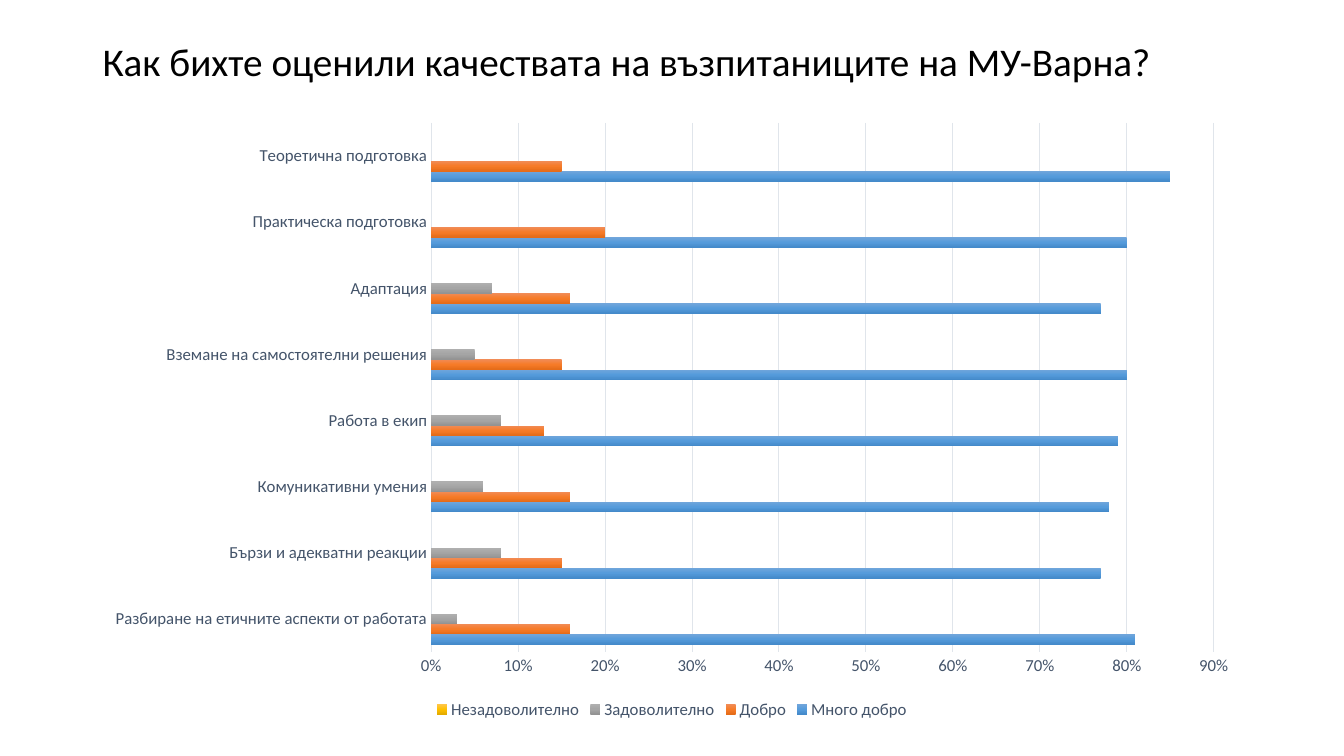
from dataclasses import dataclass

from lxml.etree import SubElement
from pptx import Presentation
from pptx.chart.data import CategoryChartData as Data
from pptx.dml.color import RGBColor as Rgb
from pptx.enum.chart import XL_CHART_TYPE as Kind
from pptx.enum.chart import XL_LEGEND_POSITION as Place
from pptx.enum.chart import XL_TICK_MARK as Tick
from pptx.enum.text import MSO_ANCHOR as Anchor
from pptx.enum.text import MSO_AUTO_SIZE as Fit
from pptx.enum.text import PP_ALIGN as Align
from pptx.oxml.ns import qn
from pptx.util import Cm, Pt


@dataclass(frozen=True)
class Theme:
    font: str = "Calibri"
    head: int = 28
    label: int = 12
    ink: str = "000000"
    slate: str = "44546A"
    grid: str = "E0E5EB"
    fades: tuple = (
        ("71A6DB", "559BDB", "448ACA"),
        ("F18C57", "F67B28", "E56C19"),
        ("AFAFAF", "A5A5A5", "939393"),
        ("FFC64B", "FFC000", "E3AB00"),
        ("6183CB", "3E70CA", "3062BB"),
    )


THEME = Theme()
SKILLS = (
    "Разбиране на етичните аспекти от работата",
    "Бързи и адекватни реакции",
    "Комуникативни умения",
    "Работа в екип",
    "Вземане на самостоятелни решения",
    "Адаптация",
    "Практическа подготовка",
    "Теоретична подготовка",
)
BLANK = (None,) * len(SKILLS)
GRADES = (
    ("Много добро", (0.81, 0.77, 0.78, 0.79, 0.8, 0.77, 0.8, 0.85)),
    ("Добро", (0.16, 0.15, 0.16, 0.13, 0.15, 0.16, 0.2, 0.15)),
    ("Задоволително", (0.03, 0.08, 0.06, 0.08, 0.05, 0.07, None, None)),
    ("Незадоволително", BLANK),
    ("", BLANK),
)


def style(font, size, tint):
    font.name = THEME.font
    font.size = Pt(size)
    font.bold = False
    font.color.rgb = Rgb.from_string(tint)


def rule(line):
    line.color.rgb = Rgb.from_string(THEME.grid)
    line.width = Pt(0.75)


def fade(bar, tints):
    """Fill a series from top to bottom with evenly spaced colour stops."""
    fill = bar.format.fill
    fill.gradient()
    fill.gradient_angle = 270
    stops = bar._element.find(".//" + qn("a:gsLst"))
    stops.clear()
    for i, tint in enumerate(tints):
        stop = SubElement(stops, qn("a:gs"), pos=str(i * 50000))
        SubElement(stop, qn("a:srgbClr"), val=tint)


def add_title(slide, text):
    title = slide.shapes.title
    title.left, title.top = Cm(2.33), Cm(0.43)
    title.width, title.height = Cm(29.21), Cm(2.36)
    frame = title.text_frame
    frame.word_wrap = True
    frame.auto_size = Fit.NONE
    frame.vertical_anchor = Anchor.MIDDLE
    para = frame.paragraphs[0]
    para.alignment = Align.LEFT
    para.line_spacing = 0.9
    run = para.add_run()
    run.text = text
    style(run.font, THEME.head, THEME.ink)


def set_axes(chart):
    for axis in (chart.category_axis, chart.value_axis):
        axis.major_tick_mark = axis.minor_tick_mark = Tick.NONE
        style(axis.tick_labels.font, THEME.label, THEME.slate)
    cats, vals = chart.category_axis, chart.value_axis
    rule(cats.format.line)
    vals.format.line.fill.background()
    vals.has_major_gridlines = True
    rule(vals.major_gridlines.format.line)
    vals.tick_labels.number_format = "0%"
    vals.tick_labels.number_format_is_linked = False


def set_legend(chart):
    """Put the legend below and leave out the entry of the unnamed series."""
    chart.has_legend = True
    legend = chart.legend
    legend.position = Place.BOTTOM
    legend.include_in_layout = False
    style(legend.font, THEME.label, THEME.slate)
    root = legend._element
    entry = SubElement(root, qn("c:legendEntry"))
    SubElement(entry, qn("c:idx"), val="0")
    SubElement(entry, qn("c:delete"), val="1")
    root.find(qn("c:legendPos")).addnext(entry)


def add_bars(slide):
    data = Data(number_format="0%")
    data.categories = SKILLS
    for name, vals in GRADES:
        data.add_series(name, vals)
    chart = slide.shapes.add_chart(
        Kind.BAR_CLUSTERED, Cm(2.33), Cm(2.79), Cm(29.21), Cm(15.44), data
    ).chart
    chart.has_title = False
    style(chart.font, 10, THEME.ink)
    plot = chart.plots[0]
    plot.gap_width = 150
    plot.overlap = 0
    plot.vary_by_categories = False
    for bar, tints in zip(plot.series, THEME.fades):
        fade(bar, tints)
    set_axes(chart)
    set_legend(chart)


def main():
    deck = Presentation()
    deck.slide_width, deck.slide_height = Cm(33.87), Cm(19.05)
    slide = deck.slides.add_slide(deck.slide_layouts[5])
    add_title(slide, "Как бихте оценили качествата на възпитаниците на МУ-Варна?")
    add_bars(slide)
    deck.save("out.pptx")


if __name__ == "__main__":
    main()
